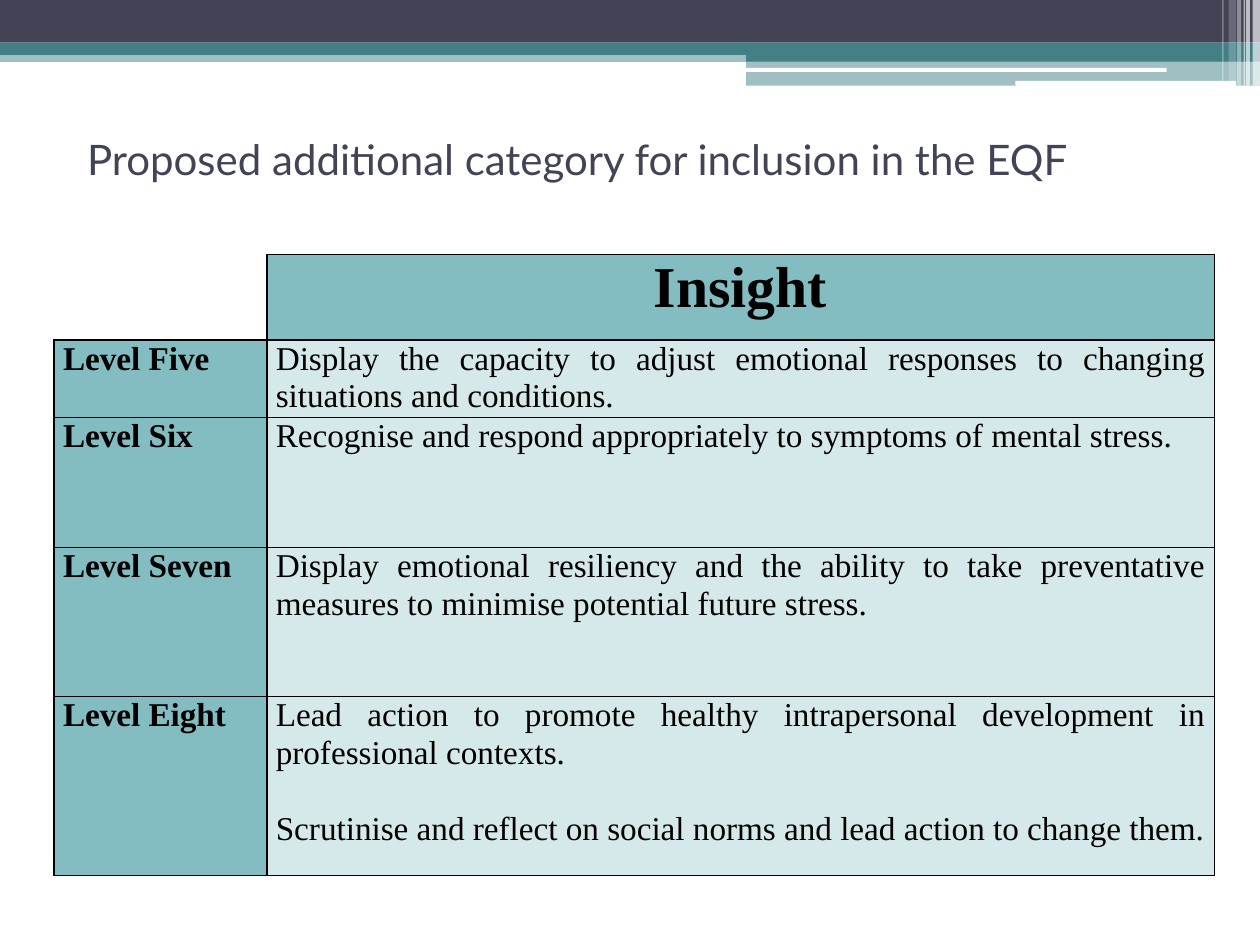
import pptx
import pptx.util
import pptx.dml.color
import pptx.enum.shapes
import pptx.enum.text
import pptx.oxml
import pptx.oxml.ns

Cm, Pt = pptx.util.Cm, pptx.util.Pt
ALIGN = pptx.enum.text.PP_ALIGN
SHAPE = pptx.enum.shapes.MSO_SHAPE
qn = pptx.oxml.ns.qn

NAVY, TEAL, WHITE, BLACK = "424456", "438086", "FFFFFF", "000000"
HEAD, PALE = "83BCC1", "D6E9EA"

TITLE = "Proposed additional category for inclusion in the EQF"
HEADING = "Insight"
LEVELS = [
    ("Level Five", ["Display the capacity to adjust emotional responses to changing situations and conditions."]),
    ("Level Six", ["Recognise and respond appropriately to symptoms of mental stress."]),
    ("Level Seven", ["Display emotional resiliency and the ability to take preventative measures to minimise potential future stress."]),
    ("Level Eight", ["Lead action to promote healthy intrapersonal development in professional contexts.",
                     "Scrutinise and reflect on social norms and lead action to change them."]),
]
COLS = [4.29, 19.1]
ROWS = [1.72, 1.57, 2.62, 3, 3.61]

BANDS = [
    (0, 1.02, 25.4, 0.23, TEAL, 50),
    (0, 0, 25.4, 0.86, NAVY, 100),
    (0, 0.86, 25.4, 0.25, TEAL, 100),
    (15.04, 0.99, 10.36, 0.25, TEAL, 100),
    (15.04, 1.22, 10.36, 0.51, TEAL, 50),
]
RULES = [(15.01, 1.37, 8.51, 0.08), (20.47, 1.63, 4.45, 0.1)]
STRIPES = [
    (25.25, 0.15, 1.73, 65),
    (25.12, 0.08, 1.73, 65),
    (25.07, 0.03, 1.73, 60),
    (24.94, 0.08, 1.73, 40),
    (24.77, 0.15, 1.63, 20),
    (24.64, 0.03, 1.63, 30),
]


def rgb(color):
    return pptx.dml.color.RGBColor.from_string(color)


def fill_solid(obj, color):
    obj.fill.solid()
    obj.fill.fore_color.rgb = rgb(color)


def add_bar(s, x, y, w, h, color, alpha=100, kind=SHAPE.RECTANGLE):
    sp = s.shapes.add_shape(kind, Cm(x), Cm(y), Cm(w), Cm(h))
    sp.shadow.inherit = False
    sp.line.fill.background()
    fill_solid(sp, color)
    if alpha < 100:
        clr = sp.fill._xPr.find(".//" + qn("a:srgbClr"))
        clr.append(pptx.oxml.parse_xml(
            f'<a:alpha {pptx.oxml.ns.nsdecls("a")} val="{alpha * 1000}"/>'))


def add_run(p, text, font, size, color, bold=False):
    r = p.add_run()
    r.text = text
    r.font.name, r.font.size, r.font.bold = font, Pt(size), bold
    r.font.color.rgb = rgb(color)


def set_borders(cell, sides):
    tcPr = cell._tc.get_or_add_tcPr()
    for i, side in enumerate(sides):
        tcPr.insert(i, pptx.oxml.parse_xml(
            f'<a:ln{side} {pptx.oxml.ns.nsdecls("a")} w="12700"><a:solidFill>'
            f'<a:srgbClr val="{BLACK}"/></a:solidFill></a:ln{side}>'))


def fill_cell(cell, texts, color, size=19, bold=False, align=ALIGN.JUSTIFY):
    fill_solid(cell, color)
    set_borders(cell, "LRTB")
    cell.margin_left = cell.margin_right = Cm(0.18)
    cell.margin_top = cell.margin_bottom = 0
    tf = cell.text_frame
    for i, text in enumerate(texts):
        p = tf.add_paragraph() if i else tf.paragraphs[0]
        p.alignment, p.line_spacing = align, 1.02
        if i:
            p.space_before = Pt(22.3)
        add_run(p, text, "Times New Roman", size, BLACK, bold)


def add_levels(s):
    tbl = s.shapes.add_table(len(ROWS), len(COLS), Cm(1.09), Cm(5.13),
                             Cm(sum(COLS)), Cm(sum(ROWS))).table
    tbl.first_row = tbl.horz_banding = False
    for col, w in zip(tbl.columns, COLS):
        col.width = Cm(w)
    for row, h in zip(tbl.rows, ROWS):
        row.height = Cm(h)
    corner = tbl.cell(0, 0)
    corner.fill.background()
    set_borders(corner, "RB")
    fill_cell(tbl.cell(0, 1), [HEADING], HEAD, 33, True, ALIGN.CENTER)
    for i, (level, texts) in enumerate(LEVELS, 1):
        fill_cell(tbl.cell(i, 0), [level], HEAD, bold=True)
        fill_cell(tbl.cell(i, 1), texts, PALE)


def add_title(s):
    sp = s.shapes.title
    sp.left, sp.top, sp.width, sp.height = Cm(1.5), Cm(2.51), Cm(22.86), Cm(2.97)
    tf = sp.text_frame
    tf.word_wrap = True
    tf.vertical_anchor = pptx.enum.text.MSO_ANCHOR.TOP
    tf.margin_top = Cm(0.18)
    p = tf.paragraphs[0]
    p.alignment = ALIGN.LEFT
    add_run(p, TITLE, "Lato", 24, NAVY)


def main():
    prs = pptx.Presentation()
    prs.slide_width, prs.slide_height = Cm(25.4), Cm(19.05)
    s = prs.slides.add_slide(prs.slide_layouts[5])
    for band in BANDS:
        add_bar(s, *band)
    for rule in RULES:
        add_bar(s, *rule, WHITE, kind=SHAPE.ROUNDED_RECTANGLE)
    for x, w, h, alpha in STRIPES:
        add_bar(s, x, 0, w, h, WHITE, alpha)
    add_title(s)
    add_levels(s)
    prs.save("out.pptx")


if __name__ == "__main__":
    main()
